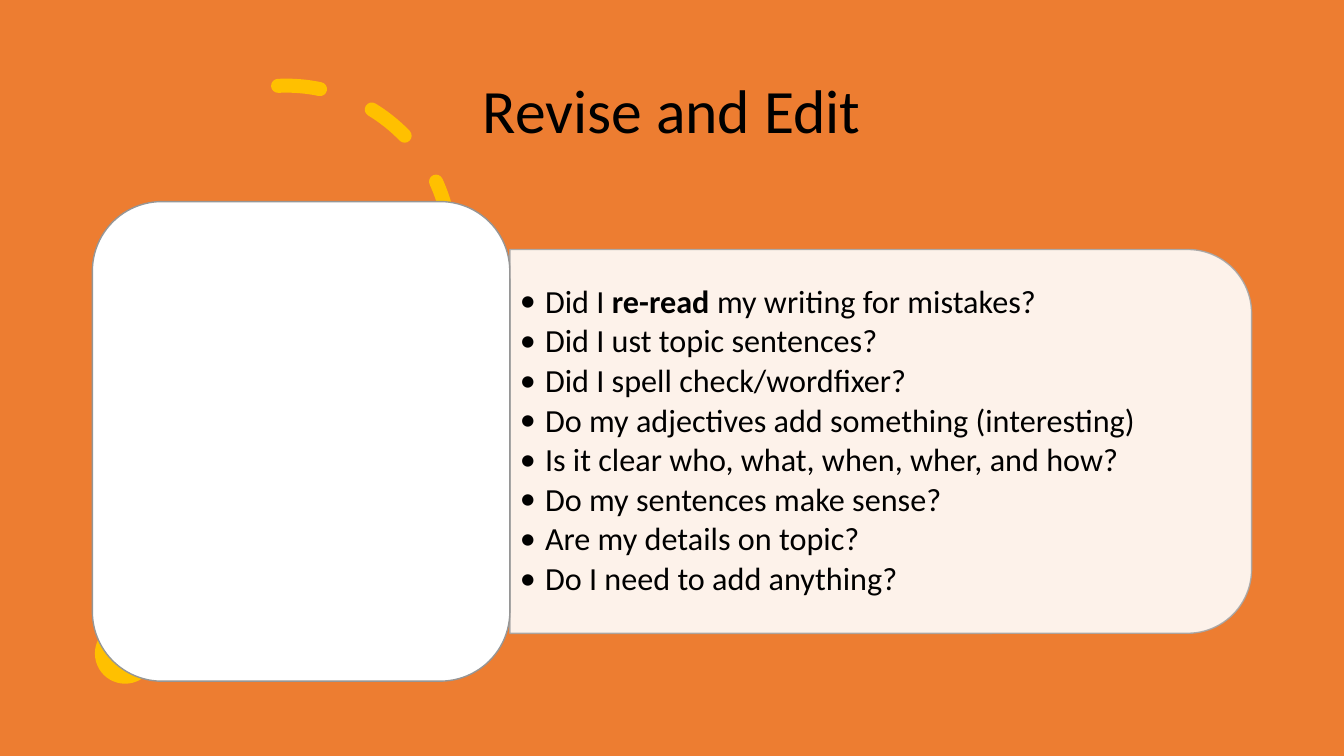
"""Build the "Revise and Edit" checklist slide on a grid of 16 columns by 9 rows."""
from lxml.etree import SubElement
from pptx import Presentation
from pptx.dml.color import RGBColor
from pptx.enum.dml import MSO_LINE_DASH_STYLE as DASH
from pptx.enum.shapes import MSO_SHAPE as SHAPE
from pptx.enum.text import MSO_ANCHOR as ANCHOR, PP_ALIGN as ALIGN
from pptx.oxml.ns import qn
from pptx.util import Inches, Pt

ORANGE = RGBColor(0xED, 0x7D, 0x31)
GOLD = RGBColor(0xFF, 0xC0, 0x00)
WHITE = RGBColor(0xFF, 0xFF, 0xFF)
BLACK = RGBColor(0x00, 0x00, 0x00)
SILVER = RGBColor(0xA5, 0xA5, 0xA5)
GREY = RGBColor(0x96, 0x96, 0x96)

UNIT = Inches(13.333) / 16
FONT = "Calibri"
INDENT = Inches(0.25)
QUESTIONS = [
    [("Did I ", False), ("re-read ", True), ("my writing for mistakes?", False)],
    [("Did I ust topic sentences?", False)],
    [("Did I spell check/wordfixer?", False)],
    [("Do my adjectives add something (interesting)", False)],
    [("Is it clear who, what, when, wher, and how?", False)],
    [("Do my sentences make sense?", False)],
    [("Are my details on topic?", False)],
    [("Do I need to add anything?", False)],
]


def cells(*box):
    return [round(value * UNIT) for value in box]


def set_alpha(fill, percent):
    color = fill._xPr.find(qn("a:solidFill"))[0]
    SubElement(color, qn("a:alpha"), val=str(percent * 1000))


def add_shape(shapes, kind, box, fill=None, line=None, width=1, alpha=None, rotation=0):
    sp = shapes.add_shape(kind, *cells(*box))
    sp.shadow.inherit = False
    sp.rotation = rotation
    if fill is None:
        sp.fill.background()
    else:
        sp.fill.solid()
        sp.fill.fore_color.rgb = fill
    if line is None:
        sp.line.fill.background()
    else:
        sp.line.color.rgb = line
        sp.line.width = Pt(width)
    if alpha is not None:
        set_alpha(sp.fill, alpha)
        set_alpha(sp.line.fill, alpha)
    return sp


def add_run(p, text, size, bold=False):
    r = p.add_run()
    r.text = text
    r.font.name, r.font.size, r.font.bold = FONT, Pt(size), bold
    r.font.color.rgb = BLACK


def add_dashed_arc(shapes, box):
    sp = add_shape(shapes, SHAPE.ARC, box, line=GOLD, width=10, rotation=357.1)
    sp.adjustments[0], sp.adjustments[1] = 162, 22.874
    sp.line.dash_style = DASH.DASH
    sp.line.fill._xPr.set("cap", "rnd")


def place_title(slide, text, box):
    title = slide.shapes.title
    title.left, title.top, title.width, title.height = cells(*box)
    slide.shapes._spTree.append(title._element)
    tf = title.text_frame
    tf.vertical_anchor = ANCHOR.MIDDLE
    p = tf.paragraphs[0]
    p.alignment, p.line_spacing = ALIGN.CENTER, 0.9
    add_run(p, text, 44)


def add_bullets(shapes, items, box):
    tf = shapes.add_textbox(*cells(*box)).text_frame
    tf.word_wrap = True
    tf.vertical_anchor = ANCHOR.MIDDLE
    for i, item in enumerate(items):
        p = tf.add_paragraph() if i else tf.paragraphs[0]
        p.level, p.line_spacing = 1, 0.9
        pPr = p._p.get_or_add_pPr()
        pPr.set("marL", str(INDENT))
        pPr.set("indent", str(-INDENT))
        SubElement(SubElement(pPr, qn("a:spcAft")), qn("a:spcPct"), val="15000")
        SubElement(pPr, qn("a:buFont"), typeface=FONT)
        SubElement(pPr, qn("a:buChar"), char="•")
        for text, bold in item:
            add_run(p, text, 23, bold)


def main():
    prs = Presentation()
    prs.slide_width, prs.slide_height = cells(16, 9)
    s = prs.slides.add_slide(prs.slide_layouts[5])
    add_shape(s.shapes, SHAPE.RECTANGLE, (0, 0, 16, 9), fill=ORANGE)
    add_dashed_arc(s.shapes, (1.45, 1.02, 3.92, 3.92))
    add_shape(s.shapes, SHAPE.OVAL, (1.13, 7.42, 0.72, 0.72), fill=GOLD)
    place_title(s, "Revise and Edit", (1.1, 0.48, 13.8, 1.74))
    checklist = s.shapes.add_group_shape().shapes
    add_shape(checklist, SHAPE.ROUND_2_SAME_RECTANGLE, (8.2, 0.84, 4.57, 8.83),
              fill=WHITE, line=SILVER, alpha=90, rotation=90)
    add_bullets(checklist, QUESTIONS, (6.07, 3.19, 8.6, 4.13))
    add_shape(checklist, SHAPE.ROUNDED_RECTANGLE, (1.1, 2.4, 4.97, 5.71),
              fill=WHITE, line=GREY)
    prs.save("out.pptx")


if __name__ == "__main__":
    main()
